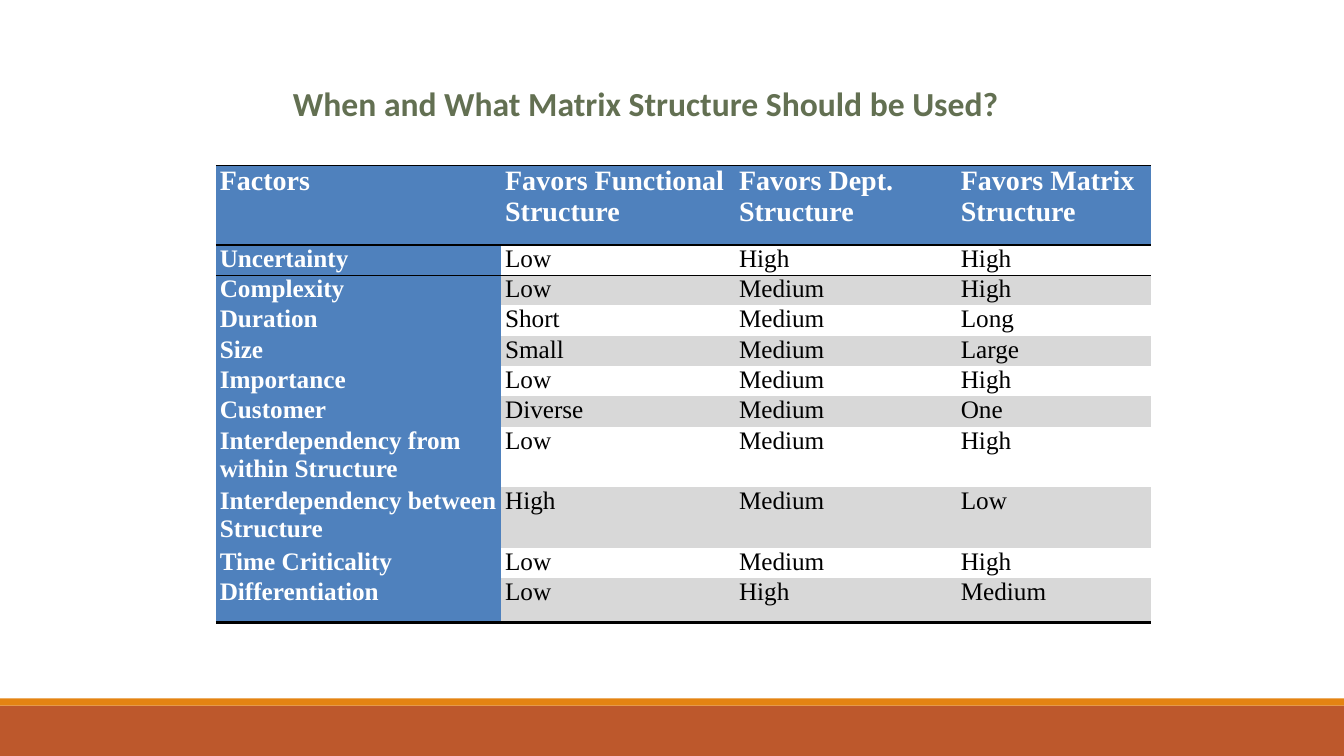
from dataclasses import dataclass

from lxml import etree
from pptx import Presentation
from pptx.dml.color import RGBColor
from pptx.enum.shapes import MSO_SHAPE
from pptx.oxml.ns import qn
from pptx.util import Inches, Pt

RECT = MSO_SHAPE.RECTANGLE
COLS, ROWS = 1333, 750
UNIT = Inches(0.01)
PLAIN = "{2D5ABB26-0587-4C30-8999-92F81FD0307C}"


@dataclass(frozen=True)
class Theme:
    rust: str = "BD582C"
    orange: str = "E48312"
    olive: str = "637052"
    blue: str = "4F81BD"
    gray: str = "D8D8D8"
    white: str = "FFFFFF"
    black: str = "000000"
    sans: str = "Calibri"
    serif: str = "Times New Roman"
    title: int = 24
    head: int = 20
    body: int = 18
    thin: float = 1
    thick: float = 2.25


THEME = Theme()

WIDTHS = [283, 232, 220, 193]
HEIGHTS = [79] + [22] * 6 + [44, 44, 22, 44]
FACTS = [
    ("Factors", "Favors Functional Structure", "Favors Dept. Structure", "Favors Matrix Structure"),
    ("Uncertainty", "Low", "High", "High"),
    ("Complexity", "Low", "Medium", "High"),
    ("Duration", "Short", "Medium", "Long"),
    ("Size", "Small", "Medium", "Large"),
    ("Importance", "Low", "Medium", "High"),
    ("Customer", "Diverse", "Medium", "One"),
    ("Interdependency from within Structure", "Low", "Medium", "High"),
    ("Interdependency between Structure", "High", "Medium", "Low"),
    ("Time Criticality", "Low", "Medium", "High"),
    ("Differentiation", "Low", "High", "Medium"),
]


def span(*cells):
    return [cell * UNIT for cell in cells]


def paint(fill, color):
    fill.solid()
    fill.fore_color.rgb = RGBColor.from_string(color)


def write(para, text, face, size, color, bold):
    run = para.add_run()
    run.text = text
    font = run.font
    font.name, font.size, font.bold = face, Pt(size), bold
    font.color.rgb = RGBColor.from_string(color)


def add_bar(slide, top, rows, color):
    bar = slide.shapes.add_shape(RECT, *span(0, top, COLS, rows))
    bar.shadow.inherit = False
    paint(bar.fill, color)
    bar.line.fill.background()


def add_title(slide, text):
    frame = slide.shapes.add_textbox(*span(274, 82, 787, 38)).text_frame
    frame.word_wrap = True
    frame.margin_left = frame.margin_right = 0
    para = frame.paragraphs[0]
    para.line_spacing = 0.9
    para.space_before, para.space_after = Pt(12), Pt(2)
    props = para._p.get_or_add_pPr()
    props.set("marL", str(Inches(0.1)))
    props.set("indent", str(-Inches(0.1)))
    etree.SubElement(props, qn("a:buChar")).set("char", " ")
    write(para, text, THEME.sans, THEME.title, THEME.olive, True)


def add_edge(cell, side, width):
    edge = etree.Element(qn("a:" + side), w=str(Pt(width)))
    fill = etree.SubElement(edge, qn("a:solidFill"))
    etree.SubElement(fill, qn("a:srgbClr"), val=THEME.black)
    cell._tc.get_or_add_tcPr().insert(0, edge)


def fill_cell(cell, text, row, col):
    label = row == 0 or col == 0
    cell.margin_left = cell.margin_right = Inches(0.04)
    cell.margin_top = cell.margin_bottom = 0
    if label:
        paint(cell.fill, THEME.blue)
    elif row % 2 == 0:
        paint(cell.fill, THEME.gray)
    else:
        cell.fill.background()
    size = THEME.body if row else THEME.head
    color = THEME.white if label else THEME.black
    write(cell.text_frame.paragraphs[0], text, THEME.serif, size, color, label)
    if row == 0:
        add_edge(cell, "lnB", THEME.thin)
    if row == len(FACTS) - 1:
        add_edge(cell, "lnB", THEME.thick)
    if row < 2:
        add_edge(cell, "lnT", THEME.thin)


def add_grid(slide):
    place = span(214, 164, sum(WIDTHS), sum(HEIGHTS))
    table = slide.shapes.add_table(len(FACTS), len(WIDTHS), *place).table
    table.first_row = table.horz_banding = False
    table._tbl.tblPr.find(qn("a:tableStyleId")).text = PLAIN
    for col, width in zip(table.columns, WIDTHS):
        col.width = width * UNIT
    for row, height in zip(table.rows, HEIGHTS):
        row.height = height * UNIT
    for row, facts in enumerate(FACTS):
        for col, text in enumerate(facts):
            fill_cell(table.cell(row, col), text, row, col)


def main():
    deck = Presentation()
    deck.slide_width, deck.slide_height = span(COLS, ROWS)
    slide = deck.slides.add_slide(deck.slide_layouts[6])
    add_bar(slide, 700, 50, THEME.rust)
    add_bar(slide, 693, 7, THEME.orange)
    add_title(slide, "When and What Matrix Structure Should be Used?")
    add_grid(slide)
    deck.save("out.pptx")


if __name__ == "__main__":
    main()
